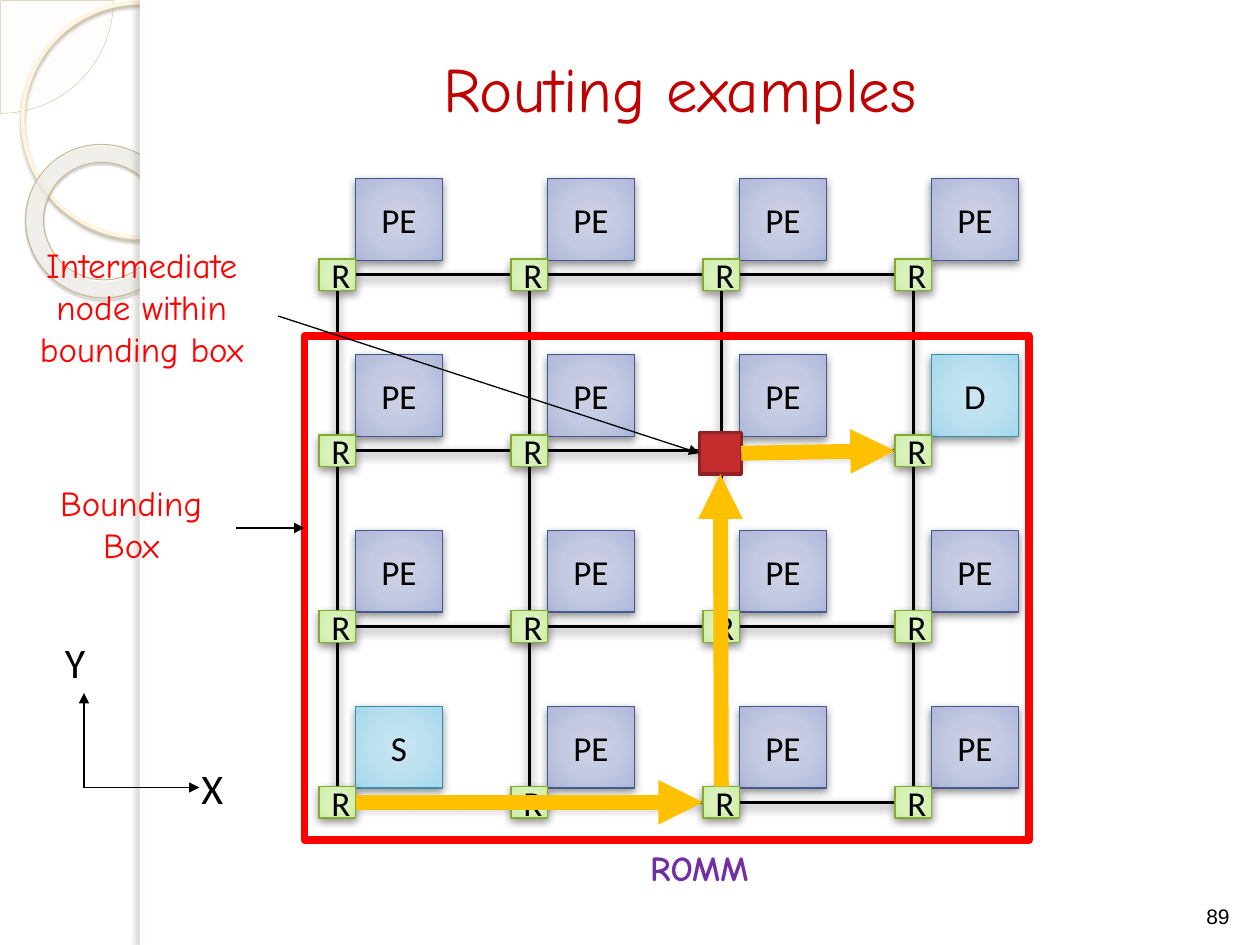
from pptx import Presentation
from pptx import util as u
from pptx.dml import color
from pptx.enum import shapes, text
from pptx.oxml import parse_xml
from pptx.oxml import ns

Pt = u.Pt
rgb = color.RGBColor.from_string
KIND = shapes.MSO_SHAPE
ALIGN = text.PP_ALIGN
ANCHOR = text.MSO_ANCHOR
DRAWING = ns.nsdecls("a")

BLUE = [(0, "CFD3E7", 100), (50, "C3C9E2", 100), (97, "AFB8DA", 100), (100, "A8B2DA", 100)]
CYAN = [(0, "C9E6F2", 100), (50, "BBE0EF", 100), (97, "A4D8ED", 100), (100, "9BD7EE", 100)]
GREEN = [(0, "DFF3C7", 100), (50, "D8F1BA", 100), (97, "CDEFA2", 100), (100, "CAF199", 100)]
CREAM = [(0, "FFFCF6", 70), (70, "FFFEFB", 55), (100, "F0D28E", 60)]
CENTRE = (50, 50, 50, 50)
GRID_SHADOW = ("000000", 43, 5, 2, 90)

presentation = Presentation()
presentation.slide_width, presentation.slide_height = Pt(720), Pt(540)
slide = presentation.slides.add_slide(presentation.slide_layouts[5])


def add_box(kind, box, fill=None, line=None, weight=0.75, focus=CENTRE):
    shape = slide.shapes.add_shape(kind, *map(Pt, box))
    shape.shadow.inherit = False
    if isinstance(fill, str):
        shape.fill.solid()
        shape.fill.fore_color.rgb = rgb(fill)
    else:
        shape.fill.background()
    if isinstance(fill, list):
        stops = "".join(
            f'<a:gs pos="{position * 1000}"><a:srgbClr val="{tone}">'
            f'<a:alpha val="{alpha * 1000}"/></a:srgbClr></a:gs>'
            for position, tone, alpha in fill)
        left, top, right, bottom = (edge * 1000 for edge in focus)
        properties = shape.element.spPr
        properties.replace(properties.find(ns.qn("a:noFill")), parse_xml(
            f'<a:gradFill {DRAWING} rotWithShape="1"><a:gsLst>{stops}</a:gsLst><a:path path="circle">'
            f'<a:fillToRect l="{left}" t="{top}" r="{right}" b="{bottom}"/></a:path></a:gradFill>'))
    if line:
        shape.line.color.rgb = rgb(line)
        shape.line.width = Pt(weight)
    else:
        shape.line.fill.background()
    return shape


def add_line(start, end, tone="000000", weight=0.75, arrow=True):
    line = slide.shapes.add_connector(shapes.MSO_CONNECTOR.STRAIGHT, *map(Pt, start + end))
    line.line.color.rgb = rgb(tone)
    line.line.width = Pt(weight)
    properties = line.element.spPr
    if arrow:
        properties.find(ns.qn("a:ln")).append(parse_xml(f'<a:tailEnd {DRAWING} type="triangle"/>'))
    properties.append(parse_xml(f"<a:effectLst {DRAWING}/>"))
    return line


corner = add_box(KIND.PIE, (-64, -64, 128.8, 128.8), "FEFAF4", "D3C39F", 0.25)
corner.adjustments[0], corner.adjustments[1] = 0, 54
corner.element.spPr.find(".//" + ns.qn("a:srgbClr")).append(parse_xml(f'<a:alpha {DRAWING} val="33000"/>'))
large_ring = add_box(KIND.OVAL, (13, 1.5, 134, 134), None, "FFF5DE", 2.15)
small_ring = add_box(KIND.DONUT, (14.4, 82.8, 88.6, 87.1), CREAM, "C7B893", 0.58, (-408, -50, 508, 150))
small_ring.adjustments[0] = 0.118
small_ring.rotation = 38.6
add_box(KIND.RECTANGLE, (80, 0, 640, 540), "FFFFFF")
panel_edge = add_box(KIND.RECTANGLE, (80, 0, 5.8, 540), "FFFFFF")
shadows = [
    (large_ring, ("B0A68F", 85, 2, 2, 90)),
    (small_ring, ("5A5444", 35, 1, 1.2, 75)),
    (panel_edge, ("736F63", 25, 3, 3, 180)),
]

title = slide.shapes.title
title.left, title.top, title.width, title.height = Pt(51), Pt(0), Pt(675), Pt(99.4)
slide.shapes.element.append(title.element)
captions = [(title, "Routing examples", 36, "Comic Neue", "C00000", ALIGN.CENTER, ANCHOR.MIDDLE)]

columns = [add_line((0, 0), (0, 0), weight=2, arrow=False) for column in range(4)]
rows = [add_line((0, 0), (0, 0), weight=2, arrow=False) for row in range(4)]
shadows += [(link, GRID_SHADOW) for link in columns + rows]

endpoints = {(1, 3): "D", (3, 0): "S"}
routers = {}
for row in range(4):
    for column in range(4):
        x, y = 182.3 + 109.7 * column, 148 + 100.5 * row
        name = endpoints.get((row, column), "PE")
        fill, outline = (BLUE, "475A8D") if name == "PE" else (CYAN, "3891A7")
        element = add_box(KIND.RECTANGLE, (x + 20.8, y - 46, 49.8, 46.8), fill, outline)
        router = add_box(KIND.RECTANGLE, (x, y, 21, 18), GREEN, "84AA33")
        routers[row, column] = router
        shadows += [(element, GRID_SHADOW), (router, GRID_SHADOW)]
        captions.append((element, name, 20, "Calibri", "000000", ALIGN.CENTER, ANCHOR.MIDDLE))
        if (row, column) != (1, 2):
            captions.append((router, "R", 20, "Calibri", "000000", ALIGN.CENTER, ANCHOR.MIDDLE))

for index in range(4):
    columns[index].begin_connect(routers[0, index], 2)
    columns[index].end_connect(routers[3, index], 0)
    rows[index].begin_connect(routers[index, 3], 1)
    rows[index].end_connect(routers[index, 0], 3)

add_line((48, 450), (114, 450))
add_line((48, 450), (48, 396))
add_box(KIND.RECTANGLE, (174, 192, 414, 288), None, "FF0000", 4.5)
add_line((135, 301.7), (174, 301.7))
intermediate = add_box(KIND.RECTANGLE, (399.6, 247, 24, 24), "C32D2E", "902122", 2)
add_line((159, 180.6), (399.6, 257)).end_connect(intermediate, 1)

route = [
    (routers[3, 0], 3, routers[3, 2], 1),
    (routers[3, 2], 0, intermediate, 2),
    (intermediate, 3, routers[1, 3], 1),
]
for source, source_side, target, target_side in route:
    hop = add_line((0, 0), (0, 0), "FFC000", 8.5)
    hop.begin_connect(source, source_side)
    hop.end_connect(target, target_side)

labels = [
    ((250.6, 480.2, 298, 31.7), "ROMM", 20, "Comic Neue", "7030A0", ALIGN.CENTER, ANCHOR.TOP),
    ((108, 432, 36, 36), "X", 24, "Calibri", "000000", ALIGN.LEFT, ANCHOR.TOP),
    ((30, 360, 36, 36), "Y", 24, "Calibri", "000000", ALIGN.LEFT, ANCHOR.TOP),
    ((15, 271.5, 120, 55.4), "Bounding Box", 20, "Comic Neue", "FF0000", ALIGN.CENTER, ANCHOR.TOP),
    ((3, 135.4, 156, 80), "Intermediate node within bounding box", 20, "Comic Neue", "FF0000",
     ALIGN.CENTER, ANCHOR.TOP),
    ((678, 497, 36, 37.4), "89", 12, "Arial", "000000", ALIGN.CENTER, ANCHOR.BOTTOM),
]
for box, *caption in labels:
    captions.append((slide.shapes.add_textbox(*map(Pt, box)), *caption))

for shape, wording, size, font, tone, alignment, anchor in captions:
    frame = shape.text_frame
    frame.text = wording
    frame.word_wrap = True
    frame.vertical_anchor = anchor
    paragraph = frame.paragraphs[0]
    paragraph.alignment = alignment
    paragraph.font.size = Pt(size)
    paragraph.font.name = font
    paragraph.font.bold = wording == "ROMM"
    paragraph.font.color.rgb = rgb(tone)

for shape, (tone, alpha, blur, distance, angle) in shadows:
    shape.element.spPr.find(ns.qn("a:effectLst")).append(parse_xml(
        f'<a:outerShdw {DRAWING} blurRad="{Pt(blur)}" dist="{Pt(distance)}" dir="{angle * 60000}" '
        f'algn="ctr" rotWithShape="0"><a:srgbClr val="{tone}"><a:alpha val="{alpha * 1000}"/>'
        f"</a:srgbClr></a:outerShdw>"))

presentation.save("out.pptx")
